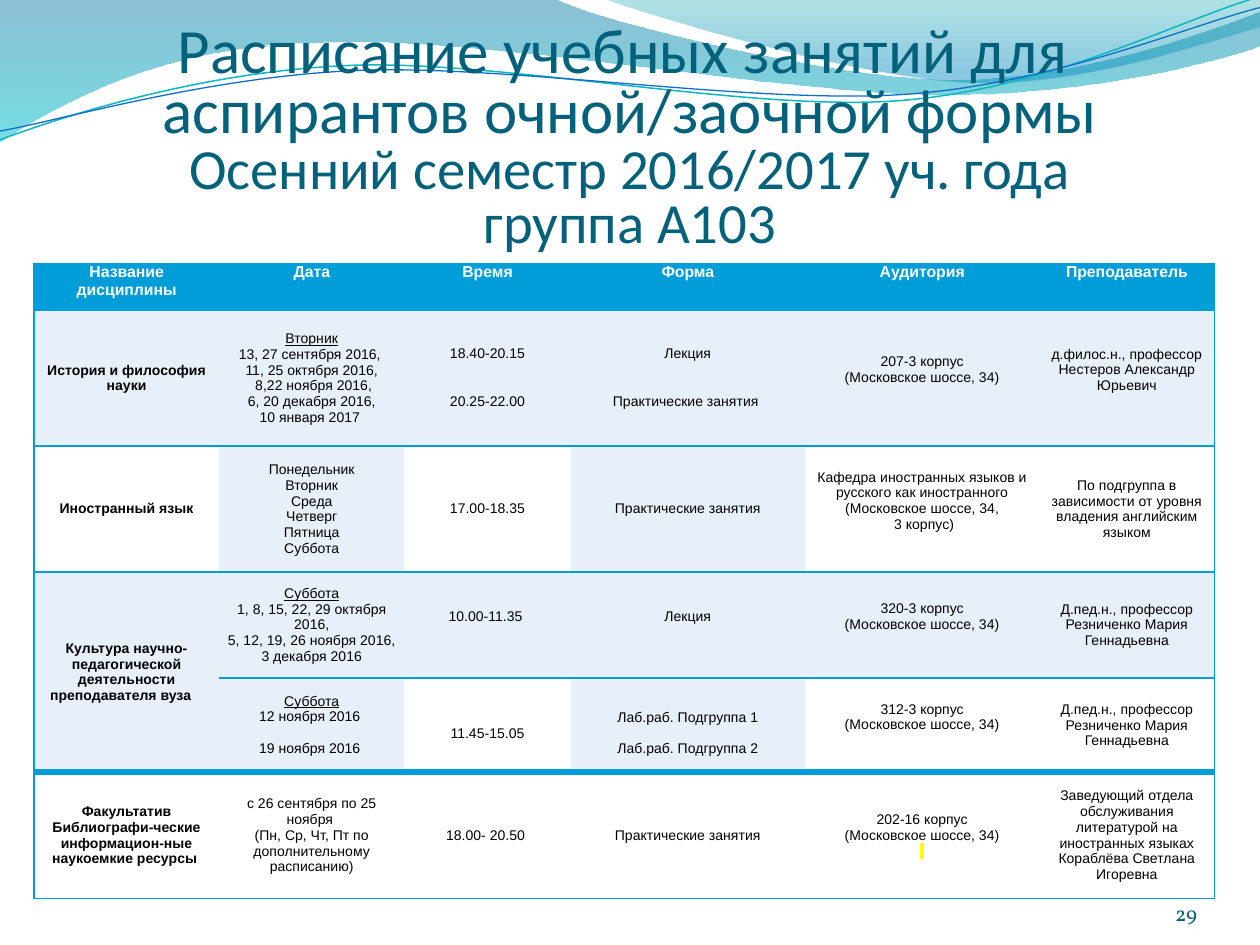
from lxml.etree import SubElement
from pptx import Presentation
from pptx.dml.color import RGBColor
from pptx.enum.text import MSO_ANCHOR, PP_ALIGN
from pptx.oxml.ns import qn
from pptx.util import Inches, Pt

WHITE = RGBColor(0xFF, 0xFF, 0xFF)
BLACK = RGBColor(0, 0, 0)
BLUE = RGBColor(0x00, 0x9D, 0xD9)
PALE = RGBColor(0xE7, 0xEF, 0xF8)
YELLOW = RGBColor(0xFF, 0xFF, 0x00)
TITLE = RGBColor(0x04, 0x61, 0x7B)
NUMBER = RGBColor(0x04, 0x5D, 0x75)
TEAL_LINE = RGBColor(0x0A, 0xB8, 0xBF)
BLUE_LINE = RGBColor(0x0F, 0x6F, 0xC6)
DEEP, AQUA = RGBColor(0x00, 0x74, 0xA1), RGBColor(0x00, 0xC6, 0xCF)
TEAL, SKY = RGBColor(0x00, 0xA1, 0xA9), RGBColor(0x00, 0x8B, 0xBF)

NO_STYLE = "{2D5ABB26-0587-4C30-8999-92F81FD0307C}"
LINE_PITCH = Pt(9.2)
MARK = "\u00a0"  # highlighted space


class SlideBuilder:
    font = "Arial"

    def __init__(self, slide):
        self.slide = slide

    def freeform(self, start, parts, close):
        """A part is a point (x, y) or a cubic curve of six numbers."""
        fb = self.slide.shapes.build_freeform(*map(Inches, start))
        fb.add_line_segments([(Inches(part[i]), Inches(part[i + 1]))
                              for part in parts for i in range(0, len(part), 2)], close=close)
        sp = fb.convert_to_shape()
        sp.shadow.inherit = False
        segments = iter(list(sp._element.iter(qn("a:lnTo"))))
        for part in parts:
            group = [next(segments) for _ in range(len(part) // 2)]
            if len(group) == 3:  # three control points make one curve
                curve = group[0].makeelement(qn("a:cubicBezTo"))
                group[0].addprevious(curve)
                for segment in group:
                    curve.append(segment[0])
                    segment.getparent().remove(segment)
        return sp

    def wave(self, start, parts, stops):
        sp = self.freeform(start, parts, True)
        sp.line.fill.background()
        sp.fill.gradient()
        sp.fill.gradient_angle = 270
        for stop, (position, color, _) in zip(sp.fill.gradient_stops, stops):
            stop.position = position
            stop.color.rgb = color
        colors = list(sp._element.spPr.iter(qn("a:srgbClr")))
        for clr, (_, _, opacity) in zip(colors, stops):
            SubElement(clr, qn("a:alpha")).set("val", str(opacity * 1000))

    def curve(self, start, parts, color, width):
        sp = self.freeform(start, parts, False)
        sp.fill.background()
        sp.line.color.rgb = color
        sp.line.width = Pt(width)

    def text(self, box, runs, font, color, align, spacing=1.0, top_inset=0):
        tf = self.slide.shapes.add_textbox(*map(Inches, box)).text_frame
        tf.word_wrap = True
        tf.vertical_anchor = MSO_ANCHOR.BOTTOM
        tf.margin_left = tf.margin_right = tf.margin_bottom = 0
        tf.margin_top = Inches(top_inset)
        p = tf.paragraphs[0]
        p.alignment = align
        p.line_spacing = spacing
        for lines, size in runs:
            for line in lines:
                if p.runs:
                    p.add_line_break()
                r = p.add_run()
                r.text = line
                r.font.size = Pt(size)
                r.font.name, r.font.color.rgb = font, color

    def table(self, box, widths, heights):
        shape = self.slide.shapes.add_table(len(heights), len(widths), *map(Inches, box))
        tbl = shape.table
        shape._element.find(".//" + qn("a:tableStyleId")).text = NO_STYLE
        tbl.first_row = tbl.horz_banding = False
        for col, width in zip(tbl.columns, widths):
            col.width = Inches(width)
        for row, height in zip(tbl.rows, heights):
            row.height = Inches(height)
        return tbl

    def borders(self, cell, widths):
        """Widths in points for the left, right, top and bottom edges; 0 is no line."""
        tcPr = cell._tc.get_or_add_tcPr()
        for side, width in zip("LRTB", widths):
            if width:
                ln = SubElement(tcPr, qn("a:ln" + side), w=str(Pt(width)), cmpd="sng")
                fill = SubElement(ln, qn("a:solidFill"))
                SubElement(fill, qn("a:srgbClr"), val=str(BLUE))
                SubElement(ln, qn("a:prstDash"), val="solid")

    def cell(self, cell, text, size, color, bold, fill, anchor):
        """Empty lines in the text become margins or paragraph spacing; _ underlines."""
        cell.fill.solid()
        cell.fill.fore_color.rgb = fill
        cell.vertical_anchor = anchor
        cell.margin_left = cell.margin_right = Inches(0.06)
        cell.margin_top = LINE_PITCH * (len(text) - len(text.lstrip("\n")))
        cell.margin_bottom = LINE_PITCH * (len(text) - len(text.rstrip("\n")))
        tf, gap, first = cell.text_frame, 0, True
        for line in text.strip("\n").split("\n"):
            if not line:
                gap += 1
                continue
            p = tf.paragraphs[0] if first else tf.add_paragraph()
            first = False
            p.alignment = PP_ALIGN.CENTER
            if gap:
                p.space_before, gap = LINE_PITCH * gap, 0
            r = p.add_run()
            r.text = line.lstrip("_")
            f = r.font
            f.name, f.size, f.bold = self.font, Pt(size), bold
            f.color.rgb = color
            if line.startswith("_"):
                f.underline = True
            if line == MARK:
                hl = r._r.rPr.makeelement(qn("a:highlight"))
                r._r.rPr.find(qn("a:solidFill")).addnext(hl)
                SubElement(hl, qn("a:srgbClr"), val=str(YELLOW))


ADDRESS = "(Московское шоссе, 34)"
REZNICHENKO = "Д.пед.н., профессор\nРезниченко Мария Геннадьевна"
HEADER = ["Название дисциплины", "Дата", "Время", "Форма", "Аудитория", "Преподаватель"]
ROWS = [
    ["История и философия науки",
     "_Вторник\n13, 27 сентября 2016, \n11, 25 октября 2016,\n 8,22 ноября 2016,\n"
     "6, 20 декабря 2016,\n10 января 2017 ",
     "18.40-20.15\n\n\n20.25-22.00", "Лекция\n\n\nПрактические занятия ",
     f"207-3 корпус\n{ADDRESS}\n", "д.филос.н., профессор Нестеров Александр Юрьевич\n"],
    ["Иностранный язык", "Понедельник\nВторник\nСреда\nЧетверг\nПятница\nСуббота",
     "17.00-18.35", "Практические занятия",
     "Кафедра иностранных языков и русского как иностранного\n"
     "(Московское шоссе, 34,\n 3 корпус)\n",
     "По подгруппа в зависимости от уровня владения английским языком"],
    ["Культура научно-педагогической деятельности преподавателя вуза   ",
     "_Суббота\n1, 8, 15, 22, 29 октября 2016,\n5, 12, 19, 26 ноября 2016,\n3 декабря 2016",
     "\n10.00-11.35 \n\n", "\nЛекция\n\n", f"320-3 корпус\n{ADDRESS}\n", REZNICHENKO],
    ["", "_Суббота\n12 ноября 2016 \n\n19 ноября 2016 ", "\n11.45-15.05",
     "\nЛаб.раб. Подгруппа 1\n\nЛаб.раб. Подгруппа 2",
     f"312-3 корпус\n{ADDRESS}\n", REZNICHENKO],
    ["Факультатив Библиографи-ческие информацион-ные наукоемкие ресурсы ",
     "с 26 сентября по 25 ноября \n(Пн, Ср, Чт, Пт по дополнительному расписанию)",
     "18.00- 20.50 ", "Практические занятия", f"202-16 корпус\n{ADDRESS}\n{MARK}",
     "Заведующий отдела обслуживания литературой на иностранных языках\n"
     "Кораблёва Светлана Игоревна"],
]
# Fill of each row: B header, P pale, W white
FILLS = ["BBBBBB", "PPPPPP", "WPWPWW", "PPPPPP", "PPWPWW", "WWWWWW"]
FILL_COLORS = {"B": BLUE, "P": PALE, "W": WHITE}
EDGES = [1, 1, 1, 1, 1, 4, 1]  # horizontal rules from top to bottom


def main():
    prs = Presentation()
    prs.slide_width, prs.slide_height = Inches(10), Inches(7.5)
    s = SlideBuilder(prs.slides.add_slide(prs.slide_layouts[6]))

    # Waves at the top
    s.wave((0, -0.01),
           [(4.4, -0.01), (4.76, 0.17, 6.64, 0.63, 7.58, 0.63),
            (8.53, 0.63, 9.58, 0.26, 10, 0.09), (10.01, 0.36),
            (9.83, 0.44, 8.7, 0.76, 7.46, 0.75), (6.22, 0.75, 3.82, 0.28, 2.57, 0.34),
            (1.29, 0.35, 0.46, 0.83, -0.01, 1.13)],
           [(0, DEEP, 45), (1, AQUA, 55)])
    s.wave((4.79, -0.01),
           [(5.09, 0.11, 6.82, 0.62, 7.69, 0.65), (8.56, 0.69, 9.61, 0.32, 10, 0.21), (10, 0)],
           [(0, TEAL, 30), (0.8, SKY, 45)])
    s.curve((0, 1.11),
            [(0.48, 0.93, 1.58, 0.57, 2.77, 0.52), (3.95, 0.47, 5.93, 0.89, 7.13, 0.8),
             (8.33, 0.71, 9.38, 0.15, 9.98, -0.02)], TEAL_LINE, 0.85)
    s.curve((0, 1.04),
            [(0.47, 0.96, 1.64, 0.61, 2.83, 0.56), (4.03, 0.51, 5.97, 0.83, 7.17, 0.75),
             (8.36, 0.67, 9.41, 0.21, 10, 0.06)], BLUE_LINE, 0.75)

    # Title
    s.text((0.5, 0.77, 9, 1.25),
           [(["Расписание учебных занятий для  аспирантов очной/заочной формы"], 36),
            (["Осенний семестр 2016/2017 уч. года", "группа А103"], 32.4)],
           "Calibri", TITLE, PP_ALIGN.CENTER, 0.8, 0.05)

    # Timetable
    tbl = s.table((0.27, 2.09, 9.37, 5.04), [1.47, 1.47, 1.32, 1.86, 1.86, 1.39],
                  [0.37, 1.08, 1, 0.84, 0.75, 1])
    tbl.cell(3, 0).merge(tbl.cell(4, 0))
    for i, row in enumerate([HEADER] + ROWS):
        for j, text in enumerate(row):
            cell = tbl.cell(i, j)
            top = 0 if (i, j) == (4, 0) else EDGES[i]
            bottom = 0 if (i, j) == (3, 0) else EDGES[i + 1]
            s.borders(cell, (int(j == 0), int(j == 5), top, bottom))
            if cell.is_spanned:
                continue
            s.cell(cell, text, 8 if i else 9, BLACK if i else WHITE, i == 0 or j == 0,
                   FILL_COLORS[FILLS[i][j]], MSO_ANCHOR.MIDDLE if i else MSO_ANCHOR.TOP)

    # Slide number
    s.text((8.67, 6.95, 0.83, 0.4), [(["29"], 12)], "Vollkorn", NUMBER, PP_ALIGN.RIGHT)

    prs.save("out.pptx")


if __name__ == "__main__":
    main()
